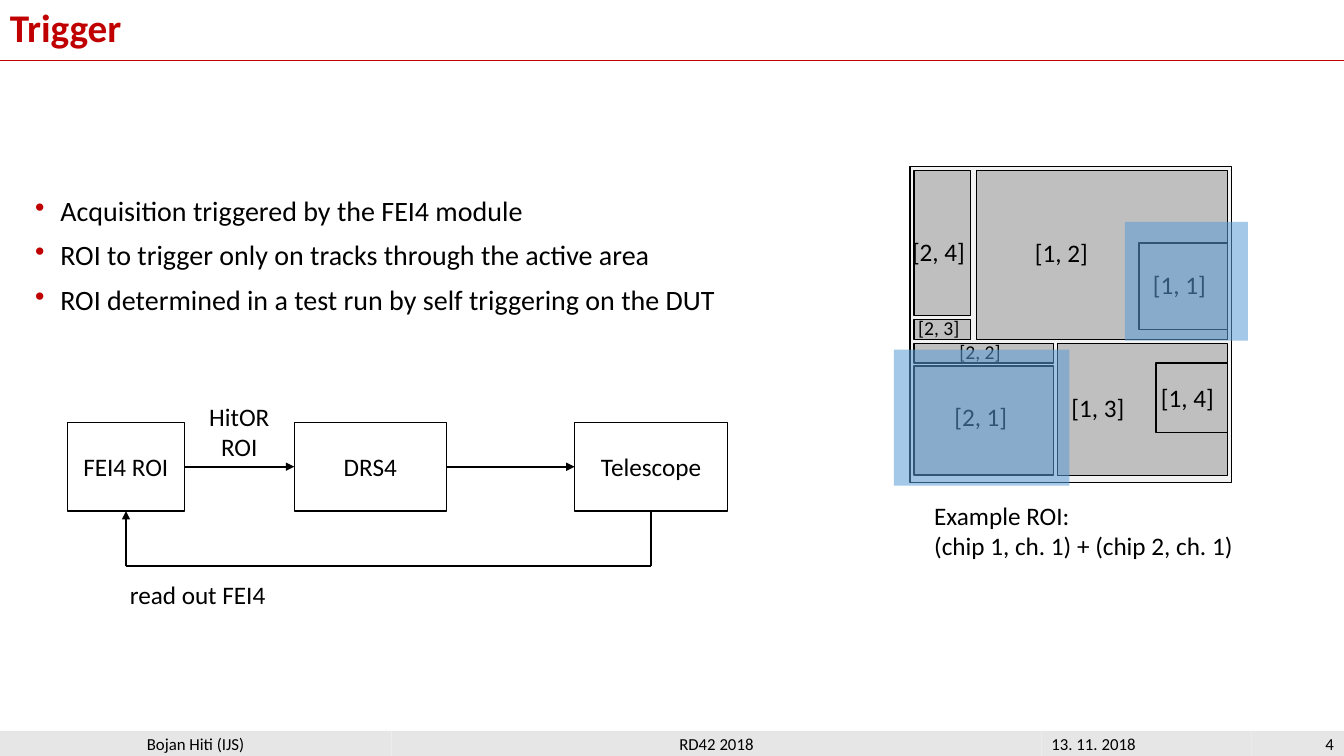
"""Build the trigger slide: ROI notes, trigger loop diagram and chip channel map."""
from lxml import etree
from pptx import Presentation
from pptx.dml.color import RGBColor
from pptx.enum.shapes import MSO_CONNECTOR, MSO_SHAPE
from pptx.enum.text import MSO_ANCHOR, MSO_AUTO_SIZE, PP_ALIGN
from pptx.oxml.ns import qn
from pptx.util import Pt

LEFT, CENTER, RIGHT = PP_ALIGN.LEFT, PP_ALIGN.CENTER, PP_ALIGN.RIGHT
TOP, MIDDLE = MSO_ANCHOR.TOP, MSO_ANCHOR.MIDDLE
RECTANGLE, STRAIGHT = MSO_SHAPE.RECTANGLE, MSO_CONNECTOR.STRAIGHT
FIT_TEXT = MSO_AUTO_SIZE.SHAPE_TO_FIT_TEXT
RED, BLACK, WHITE = "C00000", "000000", "FFFFFF"
FOOTER_GRAY, CHIP_GRAY, CHANNEL_GRAY, ROI_BLUE = "E7E6E6", "F2F2F2", "BFBFBF", "5B9BD5"
rgb = RGBColor.from_string

prs = Presentation()
prs.slide_width, prs.slide_height = Pt(960), Pt(540)
slide = prs.slides.add_slide(prs.slide_layouts[6])
shapes = slide.shapes


def add_panel(area, fill, outline=None):
    panel = shapes.add_shape(RECTANGLE, *map(Pt, area))
    panel.shadow.inherit = False
    panel.fill.solid()
    panel.fill.fore_color.rgb = rgb(fill)
    if outline:
        panel.line.color.rgb = rgb(outline)
        panel.line.width = Pt(1)
    else:
        panel.line.fill.background()
    return panel


def write(holder, lines, size, align=LEFT, anchor=MIDDLE, wrap=True):
    frame = holder.text_frame
    frame.word_wrap = wrap
    frame.vertical_anchor = anchor
    if not wrap:
        frame.auto_size = FIT_TEXT
    frame.text = "\n".join(lines)
    for paragraph in frame.paragraphs:
        paragraph.alignment = align
        paragraph.font.size = Pt(size)
        paragraph.font.name = "Calibri"
        paragraph.font.color.rgb = rgb(BLACK)
    return frame.paragraphs


footer = [
    (0, 279.5, "Bojan Hiti (IJS)", CENTER),
    (279.5, 464.5, "RD42 2018", CENTER),
    (744, 150, "13. 11. 2018", LEFT),
    (894, 66, "4", RIGHT),
]
for left, width, words, align in footer:
    write(add_panel((left, 522, width, 18), FOOTER_GRAY), [words], 12, align)

title = shapes.add_textbox(0, 0, Pt(828), Pt(42))
heading = write(title, ["Trigger"], 28)[0]
heading.line_spacing = 0.9
heading.font.bold = True
heading.font.color.rgb = rgb(RED)

notes = shapes.add_textbox(Pt(18), Pt(137.5), Pt(545), Pt(376.5))
points = write(notes, [
    "Acquisition triggered by the FEI4 module",
    "ROI to trigger only on tracks through the active area",
    "ROI determined in a test run by self triggering on the DUT",
], 20, anchor=TOP)
for index, point in enumerate(points):
    point.line_spacing = 0.9
    point.space_before = Pt(10 if index else 0)
    properties = point._p.get_or_add_pPr()
    properties.set("marL", str(Pt(18)))
    properties.set("indent", str(Pt(-18)))
    bullet_color = etree.Element(qn("a:buClr"))
    etree.SubElement(bullet_color, qn("a:srgbClr"), val=RED)
    bullet = etree.Element(qn("a:buChar"), char="•")
    run_defaults = properties.find(qn("a:defRPr"))
    run_defaults.addprevious(bullet_color)
    run_defaults.addprevious(bullet)

add_panel((650, 119, 229.5, 225.5), CHIP_GRAY, BLACK)
channels = [
    ("[2, 4]", (653, 121.7, 40.3, 103.7), (644.4, 165.6), 18),
    ("[1, 2]", (697.7, 121.7, 179.3, 121), (732.2, 166.3), 18),
    ("[1, 1]", (813.5, 173.5, 63.5, 62), (816.5, 188.6), 18),
    ("[2, 3]", (653, 228.2, 40.3, 14.4), (648.7, 221.8), 14),
    ("[2, 2]", (653, 245.5, 99.4, 13.7), (678.2, 239), 14),
    ("[2, 1]", (653, 261.4, 99.4, 77.8), (674.6, 283), 18),
    ("[1, 3]", (755.3, 245.5, 121.7, 94.3), (758.2, 276.5), 18),
    ("[1, 4]", (825.8, 259.2, 51.2, 49.7), (822.2, 269.3), 18),
]
for _, area, _, _ in channels:
    add_panel(area, CHANNEL_GRAY, BLACK)

captions = [
    ([name], (*corner, 57.6 if size == 18 else 48.2, 31 if size == 18 else 26), size, LEFT)
    for name, _, corner, size in channels
]
captions += [
    (["Example ROI:", "(chip 1, ch. 1) + (chip 2, ch. 1)"], (660.2, 353.5, 231, 51), 18, LEFT),
    (["HitOR", "ROI"], (141.8, 283, 58.3, 51), 18, CENTER),
    (["read out FEI4"], (85.7, 410.4, 112.3, 28.8), 18, LEFT),
]
for lines, area, size, align in captions:
    write(shapes.add_textbox(*map(Pt, area)), lines, size, align, TOP, wrap=False)

for roi_area in [(803.5, 158.4, 87.8, 85), (638.6, 249.8, 125.3, 97.2)]:
    roi = add_panel(roi_area, ROI_BLUE)
    roi_color = roi._element.spPr.find(qn("a:solidFill"))[0]
    etree.SubElement(roi_color, qn("a:alpha"), val="55000")

stages = [("FEI4 ROI", 48.2, 83.5), ("DRS4", 210.2, 108.7), ("Telescope", 410.4, 109.4)]
stage_top, stage_height, return_y = 301.7, 63.4, 404.6
for name, left, width in stages:
    write(add_panel((left, stage_top, width, stage_height), WHITE, BLACK), [name], 18, CENTER)

stage_middle, stage_bottom = stage_top + stage_height / 2, stage_top + stage_height
fei4_x, telescope_x = 90, 465.1
links = [
    (left + width, stage_middle, next_left, stage_middle, BLACK, 1.5, True)
    for (_, left, width), (_, next_left, _) in zip(stages, stages[1:])
]
links += [
    (telescope_x, stage_bottom, telescope_x, return_y, BLACK, 1.5, False),
    (telescope_x, return_y, fei4_x, return_y, BLACK, 1.5, False),
    (fei4_x, return_y, fei4_x, stage_bottom, BLACK, 1.5, True),
    (0, 43.2, 960, 43.2, RED, 1, False),
]
for *ends, color, weight, has_arrow in links:
    link = shapes.add_connector(STRAIGHT, *map(Pt, ends))
    link.line.color.rgb = rgb(color)
    link.line.width = Pt(weight)
    if has_arrow:
        etree.SubElement(link.line._get_or_add_ln(), qn("a:tailEnd"), type="triangle")
    etree.SubElement(link._element.spPr, qn("a:effectLst"))

prs.save("out.pptx")
